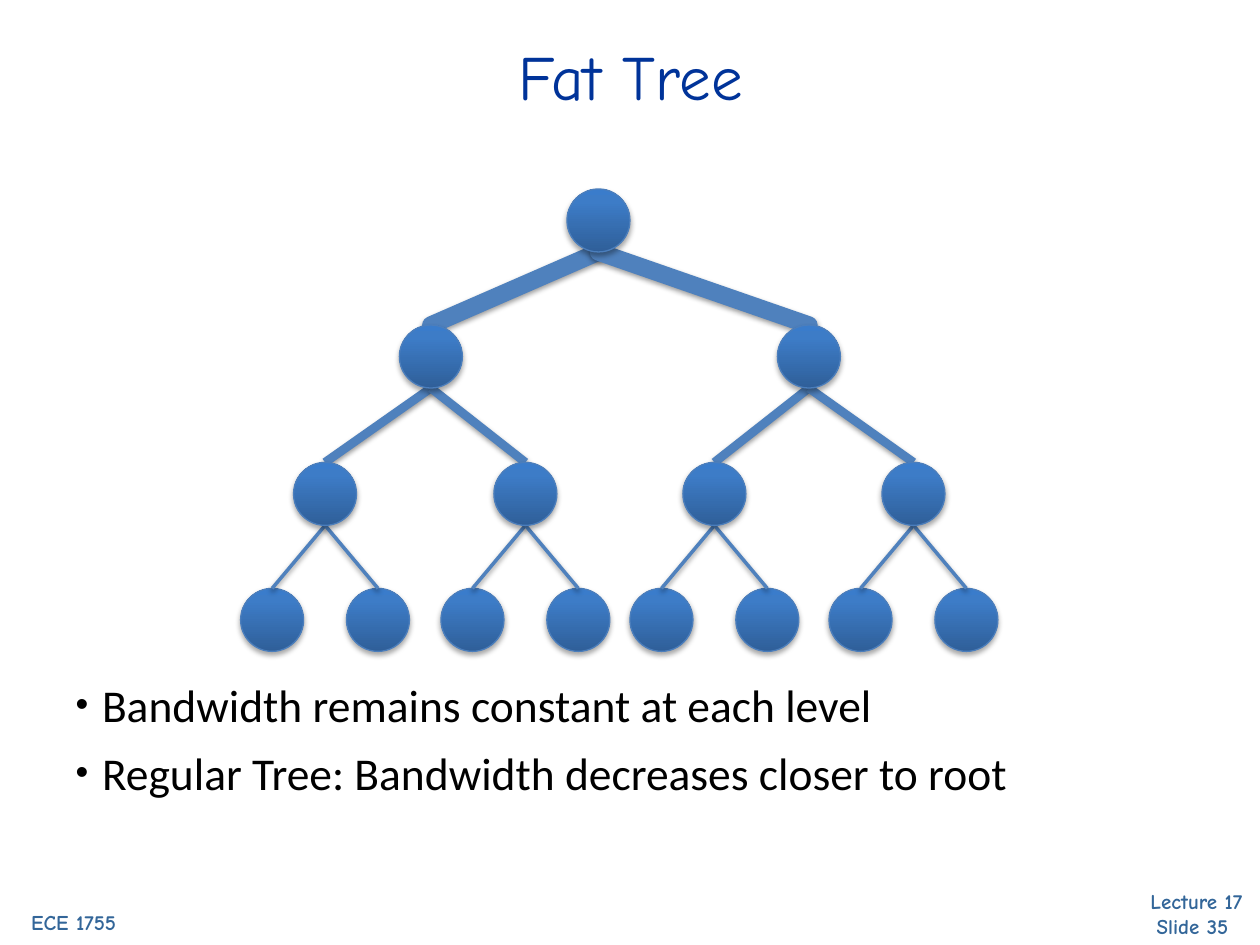
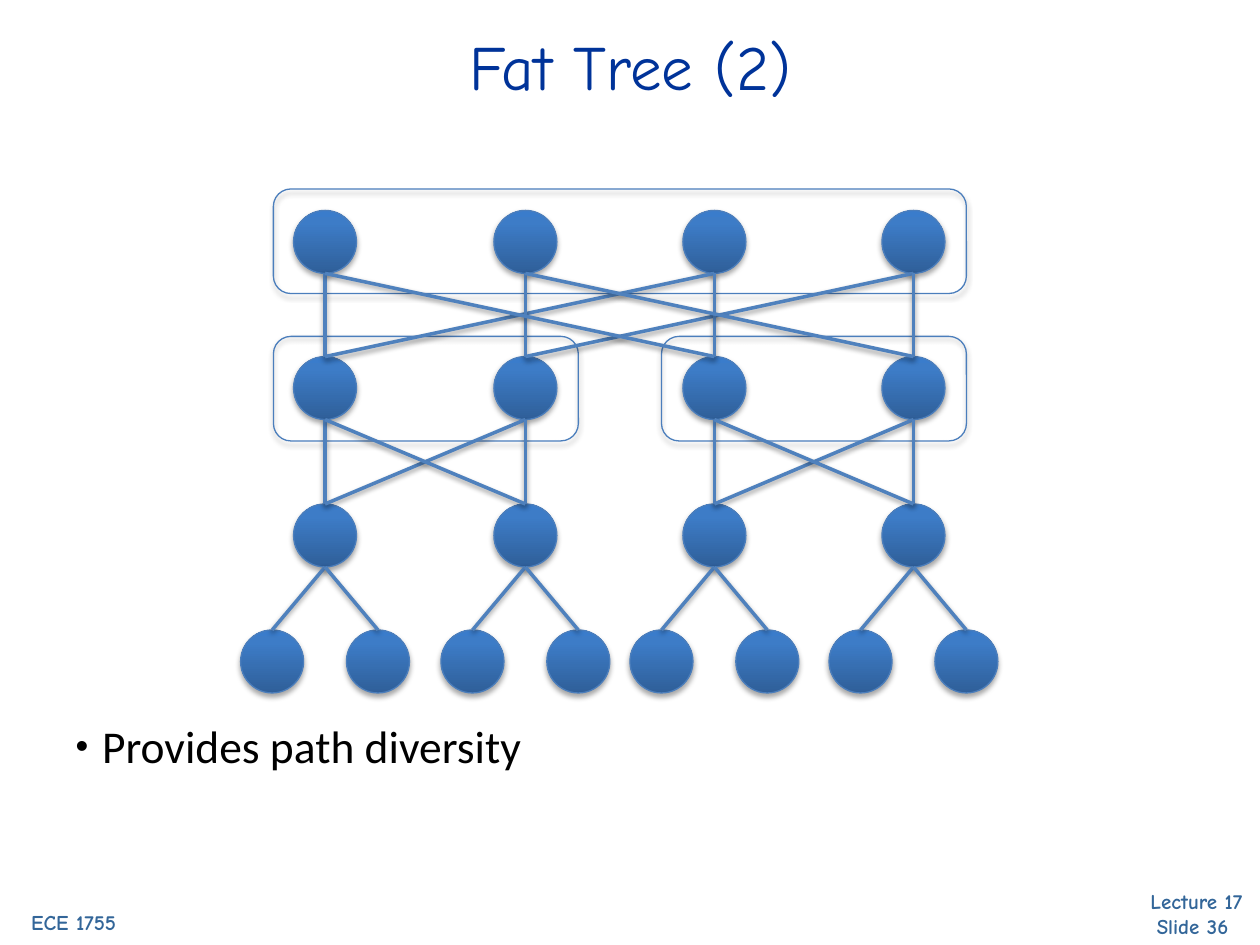
from dataclasses import dataclass

from lxml import etree
from pptx import Presentation
from pptx import util as u
from pptx.dml.color import RGBColor
from pptx.enum import shapes, text
from pptx.oxml import parse_xml
from pptx.oxml.ns import nsdecls, qn
from pptx.slide import Slide

TITLE_BLUE = RGBColor(0x00, 0x33, 0x99)
FOOTER_BLUE = RGBColor(0x33, 0x66, 0x99)
LINK_BLUE = RGBColor(0x4F, 0x81, 0xBD)
OUTLINE_BLUE = RGBColor(0x4B, 0x7E, 0xBC)
BLACK = RGBColor(0x00, 0x00, 0x00)
NODE_GRADIENT = (
    (0, RGBColor(0x2F, 0x5F, 0x99)),
    (80, RGBColor(0x3D, 0x7C, 0xC7)),
    (100, RGBColor(0x3A, 0x7C, 0xCB)),
)
HEADING_FONT = "Comic Neue"
BODY_FONT = "Calibri"

NODE_SIZE = 0.5
LEAF_OFFSET = 0.42
FRAME_HEIGHT = 0.83
SWITCH_CENTERS = (2.58, 4.17, 5.67, 7.25)
LEAF_CENTERS = tuple(
    center + side * LEAF_OFFSET for center in SWITCH_CENTERS for side in (-1, 1)
)


@dataclass(frozen=True)
class Box:
    left: float
    top: float
    width: float
    height: float

    def lengths(self) -> tuple[u.Length, ...]:
        return tuple(u.Inches(v) for v in (self.left, self.top, self.width, self.height))


@dataclass(frozen=True)
class Level:
    centers: tuple[float, ...]
    top: float

    @property
    def bottom(self) -> float:
        return self.top + NODE_SIZE


def style_runs(paragraph, font_name: str, size: int, color: RGBColor, bold: bool = False) -> None:
    for run in paragraph.runs:
        run.font.name = font_name
        run.font.size = u.Pt(size)
        run.font.color.rgb = color
        run.font.bold = bold


def add_shadow(shape, opacity: int, distance: float) -> None:
    shape.element.spPr.append(parse_xml(
        f'<a:effectLst {nsdecls("a")}><a:outerShdw blurRad="{u.Pt(3.1)}" '
        f'dist="{u.Pt(distance)}" dir="5400000" rotWithShape="0"><a:srgbClr val="000000">'
        f'<a:alpha val="{opacity * 1000}"/></a:srgbClr></a:outerShdw></a:effectLst>'
    ))


def add_outlined_shape(slide: Slide, kind: shapes.MSO_SHAPE, box: Box):
    shape = slide.shapes.add_shape(kind, *box.lengths())
    shape.line.color.rgb = OUTLINE_BLUE
    shape.line.width = u.Pt(0.75)
    add_shadow(shape, 35, 1.8)
    return shape


def add_nodes(slide: Slide, level: Level) -> None:
    stops = "".join(
        f'<a:gs pos="{position * 1000}"><a:srgbClr val="{color}"/></a:gs>'
        for position, color in NODE_GRADIENT
    )
    for center in level.centers:
        box = Box(center - NODE_SIZE / 2, level.top, NODE_SIZE, NODE_SIZE)
        node = add_outlined_shape(slide, shapes.MSO_SHAPE.OVAL, box)
        node.element.spPr.find(qn("a:ln")).addprevious(parse_xml(
            f'<a:gradFill {nsdecls("a")} rotWithShape="1"><a:gsLst>{stops}</a:gsLst>'
            '<a:lin ang="16200000" scaled="0"/></a:gradFill>'
        ))


def add_frame(slide: Slide, left: float, top: float, width: float) -> None:
    box = Box(left, top, width, FRAME_HEIGHT)
    add_outlined_shape(slide, shapes.MSO_SHAPE.ROUNDED_RECTANGLE, box).fill.background()


def add_links(
    slide: Slide, lower: Level, upper: Level, pairs: list[tuple[int, int]],
    width: int = 2, rounded: bool = False,
) -> None:
    for child, parent in pairs:
        ends = (lower.centers[child], lower.top, upper.centers[parent], upper.bottom)
        link = slide.shapes.add_connector(
            shapes.MSO_CONNECTOR.STRAIGHT, *(u.Inches(value) for value in ends)
        )
        link.line.color.rgb = LINK_BLUE
        link.line.width = u.Pt(width)
        if rounded:
            link.element.spPr.find(qn("a:ln")).set("cap", "rnd")
        add_shadow(link, 38, 1.6)


def tree_pairs(lower: Level) -> list[tuple[int, int]]:
    return [(child, child // 2) for child in range(len(lower.centers))]


def butterfly_pairs(stride: int) -> list[tuple[int, int]]:
    return [(i, j) for i in range(len(SWITCH_CENTERS)) for j in (i, i ^ stride)]


def add_footer(slide: Slide, box: Box, words: str) -> None:
    footer = slide.shapes.add_textbox(*box.lengths())
    footer.text_frame.word_wrap = True
    paragraph = footer.text_frame.paragraphs[0]
    paragraph.text = words
    paragraph.alignment = text.PP_ALIGN.CENTER
    style_runs(paragraph, HEADING_FONT, 12, FOOTER_BLUE, bold=True)


def place_placeholder(placeholder, box: Box):
    placeholder.left, placeholder.top, placeholder.width, placeholder.height = box.lengths()
    frame = placeholder.text_frame
    frame.vertical_anchor = text.MSO_ANCHOR.TOP
    frame.auto_size = text.MSO_AUTO_SIZE.NONE
    return frame


def format_bullet(paragraph) -> None:
    paragraph.line_spacing = u.Pt(24)
    paragraph.space_before = u.Pt(15)
    properties = paragraph._p.get_or_add_pPr()
    properties.set("marL", str(u.Inches(0.21)))
    properties.set("indent", str(-u.Inches(0.21)))
    etree.SubElement(properties, qn("a:buSzPct")).set("val", "80000")
    etree.SubElement(properties, qn("a:buChar")).set("char", "•")
    style_runs(paragraph, BODY_FONT, 26, BLACK)


def add_lecture_slide(
    presentation, number: int, title: str, title_box: Box, bullets: list[str], body_box: Box
) -> Slide:
    slide = presentation.slides.add_slide(presentation.slide_layouts[1])
    add_footer(slide, Box(8.83, 7, 1.33, 0.5), f"Lecture 17\vSlide {number} ")
    add_footer(slide, Box(-0.08, 7.17, 1.33, 0.3), "ECE 1755")

    title_frame = place_placeholder(slide.shapes.title, title_box)
    title_frame.text = title
    title_frame.paragraphs[0].alignment = text.PP_ALIGN.CENTER
    style_runs(title_frame.paragraphs[0], HEADING_FONT, 36, TITLE_BLUE)

    body_frame = place_placeholder(slide.placeholders[1], body_box)
    body_frame.text = "\n".join(bullets)
    for paragraph in body_frame.paragraphs:
        format_bullet(paragraph)
    return slide


def build_fat_tree(presentation) -> None:
    slide = add_lecture_slide(
        presentation, 35, "Fat Tree", Box(0.38, 0.25, 9.25, 0.67),
        ["Bandwidth remains constant at each level",
         "Regular Tree: Bandwidth decreases closer to root"],
        Box(0.5, 5.42, 9, 1.58),
    )
    root = Level((4.75,), 1.5)
    middle = Level((3.42, 6.42), 2.58)
    switches = Level(SWITCH_CENTERS, 3.67)
    leaves = Level(LEAF_CENTERS, 4.67)

    add_nodes(slide, leaves)
    add_links(slide, leaves, switches, tree_pairs(leaves))
    add_links(slide, switches, middle, tree_pairs(switches), width=5)
    add_links(slide, middle, root, tree_pairs(middle), width=10, rounded=True)
    for level in (root, middle, switches):
        add_nodes(slide, level)


def build_path_diversity(presentation) -> None:
    slide = add_lecture_slide(
        presentation, 36, "Fat Tree (2)", Box(0.5, 0.17, 9, 1.25),
        ["Provides path diversity"], Box(0.5, 5.75, 9, 0.95),
    )
    top, middle, edge = (Level(SWITCH_CENTERS, y) for y in (1.67, 2.83, 4))
    leaves = Level(LEAF_CENTERS, 5)

    add_nodes(slide, edge)
    add_nodes(slide, leaves)
    add_links(slide, leaves, edge, tree_pairs(leaves))
    add_nodes(slide, middle)
    add_nodes(slide, top)
    add_frame(slide, 2.17, 1.5, 5.5)
    for left in (2.17, 5.25):
        add_frame(slide, left, 2.67, 2.42)
    add_links(slide, edge, middle, butterfly_pairs(1))
    add_links(slide, middle, top, butterfly_pairs(2))


def main() -> None:
    presentation = Presentation()
    presentation.slide_width = u.Inches(10)
    presentation.slide_height = u.Inches(7.5)
    build_fat_tree(presentation)
    build_path_diversity(presentation)
    presentation.save("out.pptx")


if __name__ == "__main__":
    main()
